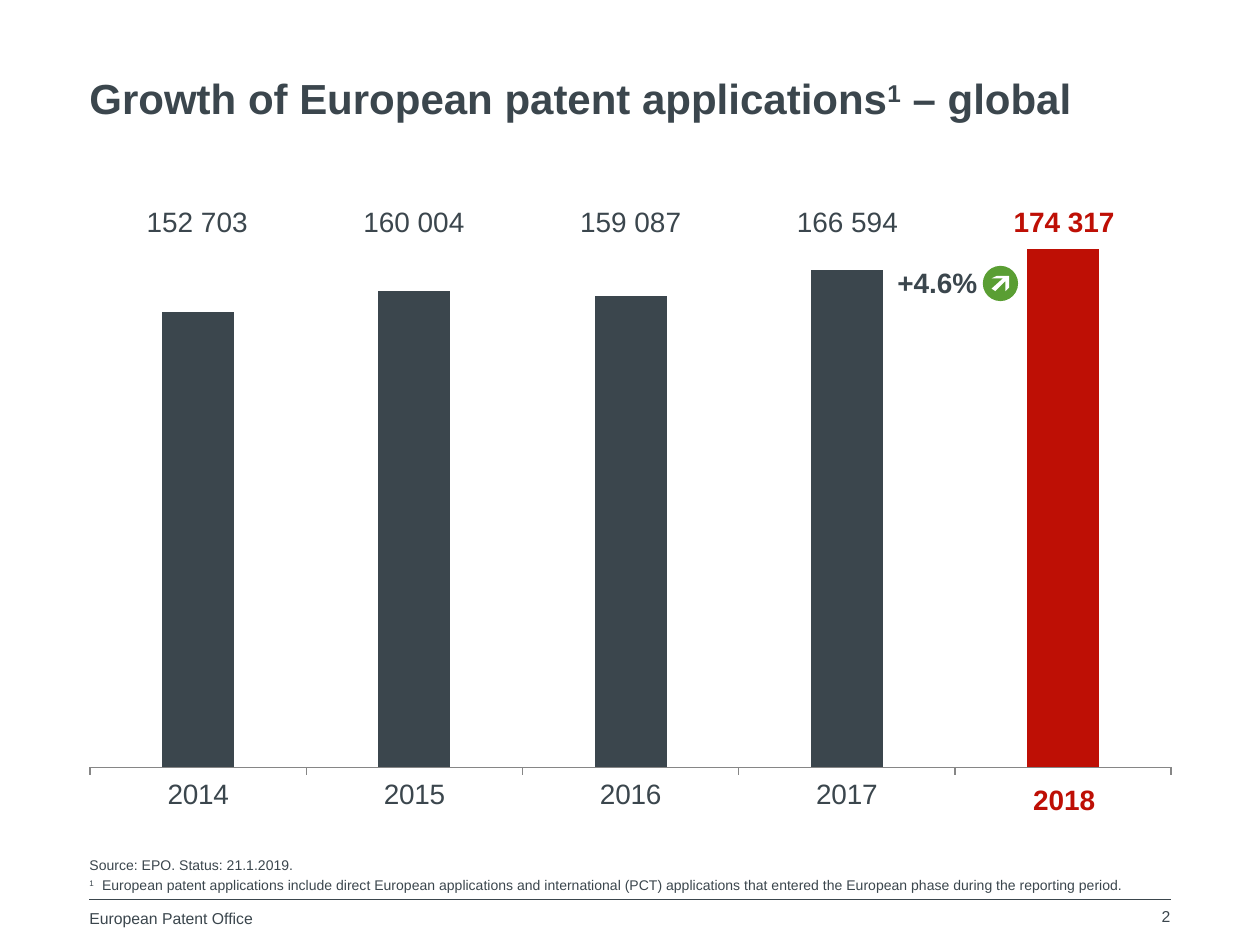
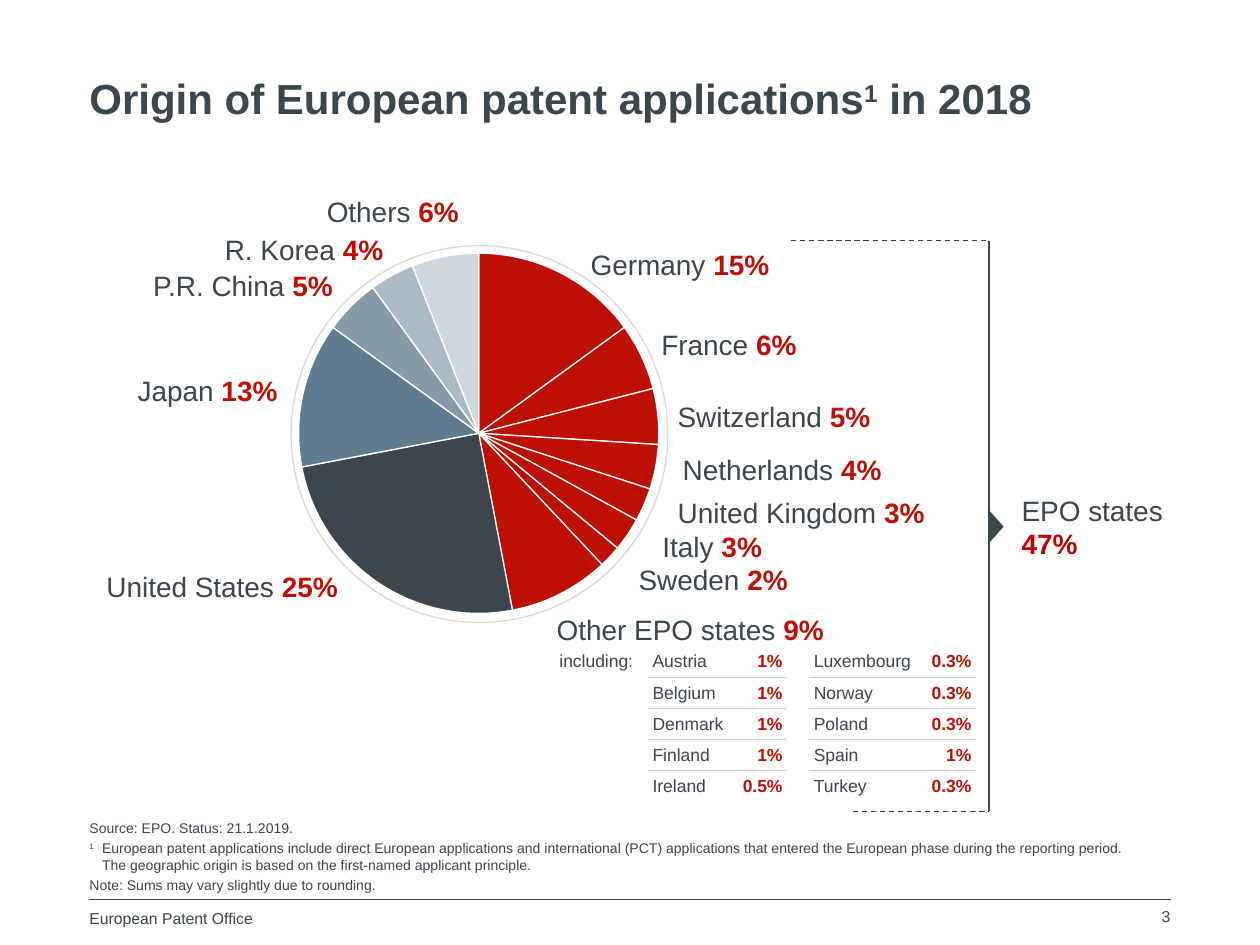
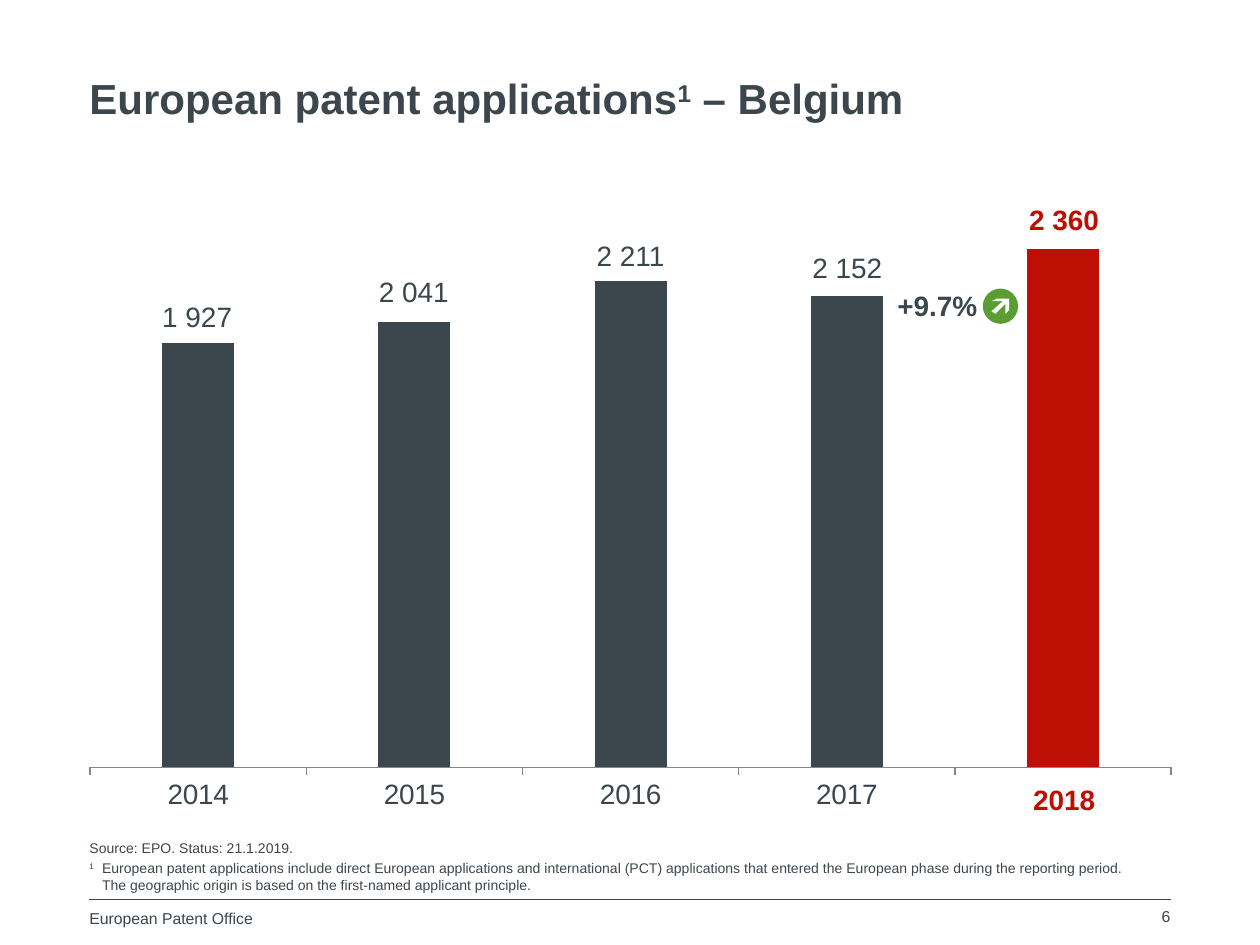
"""Build three slides on European patent applications: growth, origin and one country."""
from copy import deepcopy
from dataclasses import dataclass
from typing import NamedTuple

from lxml.etree import SubElement
from pptx import Presentation
from pptx.chart.chart import Chart
from pptx.chart.data import CategoryChartData
from pptx.dml.color import RGBColor
from pptx.enum.chart import XL_CHART_TYPE as ChartType, XL_TICK_MARK as TickMark
from pptx.enum.dml import MSO_LINE as Dash
from pptx.enum.shapes import MSO_CONNECTOR as ConnectorType, MSO_SHAPE as ShapeType
from pptx.enum.text import MSO_ANCHOR as Anchor, MSO_AUTO_SIZE as AutoSize, PP_ALIGN as Align
from pptx.oxml import parse_xml
from pptx.oxml.ns import nsdecls, qn
from pptx.slide import Slide
from pptx.table import _Cell as Cell
from pptx.text.text import TextFrame, _Paragraph as Paragraph
from pptx.util import Pt

PX = 9144
FONT = "Arial"
SLATE = RGBColor(0x3B, 0x46, 0x4D)
RED = RGBColor(0xBE, 0x0F, 0x05)
DEEP_RED = RGBColor(0xC0, 0x00, 0x00)
STEEL = RGBColor(0x5F, 0x7B, 0x8F)
MIST = RGBColor(0x85, 0x9B, 0xA9)
CLOUD = RGBColor(0xAC, 0xBA, 0xC4)
PALE = RGBColor(0xD1, 0xD8, 0xDD)
RING_GREY = RGBColor(0xD9, 0xD9, 0xD9)
RULE_GREY = RGBColor(0xCF, 0xCF, 0xCF)
AXIS_GREY = RGBColor(0x86, 0x86, 0x86)
GREEN = RGBColor(0x5A, 0x9E, 0x33)
WHITE = RGBColor(0xFF, 0xFF, 0xFF)
NO_STYLE = "{2D5ABB26-0587-4C30-8999-92F81FD0307C}"


class Box(NamedTuple):
    left: int
    top: int
    width: int
    height: int

    def emu(self) -> list[int]:
        return [length * PX for length in self]


@dataclass(frozen=True)
class Run:
    text: str
    size: int = 16
    color: RGBColor = SLATE
    bold: bool = False
    superscript: bool = False


@dataclass(frozen=True)
class Column:
    year: str
    share: int
    label: str
    label_top: int


@dataclass(frozen=True)
class Slice:
    origin: str
    percent: int
    color: RGBColor
    label: Box


@dataclass(frozen=True)
class ColumnSlide:
    number: int
    topic: str
    suffix: str
    columns: list[Column]
    growth: str
    growth_top: int
    footnote: list[str]
    source_top: int


MARGIN_LEFT, MARGIN_RIGHT = 71, 929
COLUMN_CHART = Box(71, 192, 859, 473)
COLUMN_PLOT = Box(71, 198, 859, 411)
PIE_CHART = Box(154, 187, 453, 313)
PIE_PLOT = Box(237, 201, 286, 286)
ARROW = [(11, 8), (7, 10), (16, 10), (7, 18), (10, 20), (18, 12), (18, 20), (21, 17), (21, 8)]

INCLUDED = ("European patent applications include direct European applications and international "
            "(PCT) applications that entered the European phase during the reporting period.")
PRINCIPLE = "The geographic origin is based on the first-named applicant principle."
ROUNDING = "Note: Sums may vary slightly due to rounding."

GLOBAL = ColumnSlide(
    2, "Growth of European patent applications", " – global",
    [Column("2014", 88, "152 703", 162), Column("2015", 92, "160 004", 162),
     Column("2016", 91, "159 087", 162), Column("2017", 96, "166 594", 162),
     Column("2018", 100, "174 317", 162)],
    "+4.6%", 211, [INCLUDED], 679)
BELGIUM = ColumnSlide(
    6, "European patent applications", " – Belgium",
    [Column("2014", 82, "1 927", 238), Column("2015", 86, "2 041", 218),
     Column("2016", 94, "2 211", 189), Column("2017", 91, "2 152", 199),
     Column("2018", 100, "2 360", 161)],
    "+9.7%", 229, [INCLUDED, PRINCIPLE], 666)
SLICES = [
    Slice("Germany", 15, RED, Box(459, 191, 164, 37)),
    Slice("France", 6, RED, Box(515, 255, 129, 37)),
    Slice("Switzerland", 5, RED, Box(528, 312, 175, 37)),
    Slice("Netherlands", 4, RED, Box(532, 354, 181, 37)),
    Slice("United Kingdom", 3, RED, Box(528, 388, 225, 37)),
    Slice("Italy", 3, RED, Box(516, 415, 100, 37)),
    Slice("Sweden", 2, RED, Box(497, 441, 140, 37)),
    Slice("Other EPO states", 9, RED, Box(432, 481, 235, 37)),
    Slice("United States", 25, SLATE, Box(72, 447, 206, 37)),
    Slice("Japan", 13, STEEL, Box(98, 291, 132, 37)),
    Slice("P.R. China", 5, MIST, Box(110, 208, 164, 37)),
    Slice("R. Korea", 4, CLOUD, Box(167, 179, 147, 37)),
    Slice("Others", 6, PALE, Box(248, 149, 126, 37)),
]
OTHER_STATES = [
    ("including:", "Austria", "1%", "", "Luxembourg", "0.3%"),
    ("", "Belgium", "1%", "", "Norway", "0.3%"),
    ("", "Denmark", "1%", "", "Poland", "0.3%"),
    ("", "Finland", "1%", "", "Spain", "1%"),
    ("", "Ireland", "0.5%", "", "Turkey", "0.3%"),
]
STATE_WIDTHS = [74, 68, 43, 17, 88, 45]
PERCENT_COLUMNS = {2, 5}
RULED_COLUMNS = {1, 2, 4, 5}


def add_runs(paragraph: Paragraph, runs: list[Run]) -> None:
    for item in runs:
        run = paragraph.add_run()
        run.text = item.text
        run.font.name = FONT
        run.font.size = Pt(item.size)
        run.font.bold = item.bold
        run.font.color.rgb = item.color
        if item.superscript:
            run._r.get_or_add_rPr().set("baseline", "30000")


def set_margins(target: TextFrame | Cell, margins: tuple[int, int, int, int]) -> None:
    (target.margin_left, target.margin_top,
     target.margin_right, target.margin_bottom) = [margin * PX for margin in margins]


def add_text(slide: Slide, box: Box, runs: list[Run], align: Align = Align.LEFT,
             anchor: Anchor = Anchor.TOP, margins: tuple[int, int, int, int] = (0, 0, 0, 0),
             wrap: bool = False) -> TextFrame:
    frame = slide.shapes.add_textbox(*box.emu()).text_frame
    frame.word_wrap = wrap
    frame.auto_size = AutoSize.NONE if wrap else AutoSize.SHAPE_TO_FIT_TEXT
    frame.vertical_anchor = anchor
    set_margins(frame, margins)
    frame.paragraphs[0].alignment = align
    add_runs(frame.paragraphs[0], runs)
    return frame


def add_line(slide: Slide, start: tuple[int, int], end: tuple[int, int],
             dashed: bool = False) -> None:
    points = [length * PX for length in (*start, *end)]
    connector = slide.shapes.add_connector(ConnectorType.STRAIGHT, *points)
    connector.line.color.rgb = SLATE
    connector.line.width = Pt(0.75)
    if dashed:
        connector.line.dash_style = Dash.DASH
    SubElement(connector._element.spPr, qn("a:effectLst"))


def add_filled_shape(slide: Slide, kind: ShapeType, box: Box, color: RGBColor,
                     rotation: int = 0) -> None:
    shape = slide.shapes.add_shape(kind, *box.emu())
    shape.shadow.inherit = False
    shape.fill.solid()
    shape.fill.fore_color.rgb = color
    shape.line.fill.background()
    shape.rotation = rotation


def add_source(slide: Slide, top: int, footnote: list[str], closing: str = "") -> None:
    frame = add_text(slide, Box(MARGIN_LEFT, top, 858, 709 - top),
                     [Run("Source: EPO. Status: 21.1.2019.", 8)],
                     anchor=Anchor.BOTTOM, wrap=True)
    paragraph = frame.add_paragraph()
    properties = paragraph._p.get_or_add_pPr()
    properties.set("marL", str(10 * PX))
    properties.set("indent", str(-10 * PX))
    add_runs(paragraph, [Run("1\t", 8, superscript=True), Run(footnote[0], 8)])
    for line in footnote[1:]:
        run_properties = deepcopy(paragraph.runs[-1]._r.rPr)
        paragraph.add_line_break()
        paragraph._p[-1].append(run_properties)
        add_runs(paragraph, [Run(line, 8)])
    if closing:
        add_runs(frame.add_paragraph(), [Run(closing, 8)])
    for paragraph in frame.paragraphs:
        paragraph.space_before = Pt(2)


def add_base_slide(presentation: Presentation, number: int, topic: str, suffix: str) -> Slide:
    slide = presentation.slides.add_slide(presentation.slide_layouts[5])
    title = slide.shapes.title
    title.left, title.top, title.width, title.height = Box(MARGIN_LEFT, 59, 858, 59).emu()
    frame = title.text_frame
    frame.auto_size = AutoSize.NONE
    frame.vertical_anchor = Anchor.TOP
    set_margins(frame, (0, 0, 0, 0))
    paragraph = frame.paragraphs[0]
    paragraph.alignment = Align.LEFT
    paragraph.line_spacing = Pt(28)
    add_runs(paragraph, [Run(topic, 24, bold=True), Run("1", 24, bold=True, superscript=True),
                         Run(suffix, 24, bold=True)])
    add_line(slide, (MARGIN_LEFT, 714), (MARGIN_RIGHT, 714))
    add_text(slide, Box(MARGIN_LEFT, 721, 170, 25), [Run("European Patent Office", 9)], wrap=True)
    add_text(slide, Box(732, 720, 197, 24), [Run(str(number), 9)], Align.RIGHT, wrap=True)
    return slide


def add_plain_chart(slide: Slide, kind: ChartType, box: Box, plot: Box,
                    data: CategoryChartData) -> Chart:
    chart = slide.shapes.add_chart(kind, *box.emu(), data).chart
    chart.has_legend = False
    chart.has_title = False
    chart.font.name = FONT
    chart.font.size = Pt(18)
    chart.font.color.rgb = SLATE
    chart.plots[0].vary_by_categories = False
    fractions = {
        "x": (plot.left - box.left) / box.width, "y": (plot.top - box.top) / box.height,
        "w": plot.width / box.width, "h": plot.height / box.height,
    }
    sizes = "".join(f'<c:{name} val="{value:.4f}"/>' for name, value in fractions.items())
    area = chart._chartSpace.xpath("c:chart/c:plotArea")[0]
    for layout in area.findall(qn("c:layout")):
        area.remove(layout)
    area.insert(0, parse_xml(
        f'<c:layout {nsdecls("c")}><c:manualLayout><c:layoutTarget val="inner"/>'
        f'<c:xMode val="edge"/><c:yMode val="edge"/>{sizes}</c:manualLayout></c:layout>'))
    return chart


def add_growth(slide: Slide, top: int, growth: str) -> None:
    add_text(slide, Box(712, top, 64, 27), [Run(growth, bold=True)], Align.CENTER)
    badge = Box(780, top, 28, 28)
    add_filled_shape(slide, ShapeType.OVAL, badge, GREEN)
    points = [(badge.left + x, badge.top + y) for x, y in ARROW]
    builder = slide.shapes.build_freeform(*points[0], scale=PX)
    builder.add_line_segments(points[1:], close=True)
    arrow = builder.convert_to_shape()
    arrow.shadow.inherit = False
    arrow.fill.solid()
    arrow.fill.fore_color.rgb = WHITE
    arrow.line.fill.background()


def add_column_slide(presentation: Presentation, content: ColumnSlide) -> None:
    slide = add_base_slide(presentation, content.number, content.topic, content.suffix)
    *earlier, latest = content.columns
    data = CategoryChartData()
    data.categories = [column.year for column in earlier] + [""]
    data.add_series("Series 1", [column.share for column in earlier] + [None])
    data.add_series("Series 2", [None] * len(earlier) + [latest.share])
    chart = add_plain_chart(slide, ChartType.COLUMN_STACKED, COLUMN_CHART, COLUMN_PLOT, data)
    plot = chart.plots[0]
    plot.gap_width = 200
    plot.overlap = 100
    for series, color in zip(plot.series, (SLATE, RED)):
        series.format.fill.solid()
        series.format.fill.fore_color.rgb = color
    chart.value_axis.visible = False
    chart.value_axis.has_major_gridlines = False
    chart.value_axis.minimum_scale = 0
    chart.value_axis.maximum_scale = 100
    chart.category_axis.major_tick_mark = TickMark.OUTSIDE
    chart.category_axis.tick_labels.font.size = Pt(16)
    chart.category_axis.format.line.color.rgb = AXIS_GREY
    chart.category_axis.format.line.width = Pt(0.75)

    pitch = COLUMN_PLOT.width / len(content.columns)
    for index, column in enumerate(content.columns):
        left = round(COLUMN_PLOT.left + pitch * (index + 0.5) - 40.5)
        is_latest = column is latest
        color = RED if is_latest else SLATE
        labels = [(column.label, column.label_top)]
        if is_latest:
            labels.append((column.year, 621))
        for text, top in labels:
            add_text(slide, Box(left, top, 81, 27), [Run(text, color=color, bold=is_latest)],
                     Align.CENTER)
    add_growth(slide, content.growth_top, content.growth)
    add_source(slide, content.source_top, content.footnote)


def add_cell_rule(cell: Cell, tag: str) -> None:
    cell._tc.get_or_add_tcPr().insert(0, parse_xml(
        f'<a:{tag} {nsdecls("a")} w="{Pt(0.75)}"><a:solidFill>'
        f'<a:srgbClr val="{RULE_GREY}"/></a:solidFill></a:{tag}>'))


def add_state_table(slide: Slide) -> None:
    box = Box(440, 513, sum(STATE_WIDTHS), 123)
    table = slide.shapes.add_table(len(OTHER_STATES), len(STATE_WIDTHS), *box.emu()).table
    table.first_row = False
    table.horz_banding = False
    table._tbl.tblPr.find(qn("a:tableStyleId")).text = NO_STYLE
    for column, width in zip(table.columns, STATE_WIDTHS):
        column.width = width * PX
    for row, texts in enumerate(OTHER_STATES):
        for column, text in enumerate(texts):
            cell = table.cell(row, column)
            cell.fill.background()
            cell.vertical_anchor = Anchor.MIDDLE
            set_margins(cell, (4, 4, 4, 4))
            paragraph = cell.text_frame.paragraphs[0]
            is_percent = column in PERCENT_COLUMNS
            paragraph.alignment = Align.RIGHT if is_percent else Align.LEFT
            if text:
                add_runs(paragraph, [Run(text, 10, RED if is_percent else SLATE, is_percent)])
            else:
                paragraph._p.get_or_add_endParaRPr().set("sz", "1000")
            if column in RULED_COLUMNS:
                if row < len(OTHER_STATES) - 1:
                    add_cell_rule(cell, "lnB")
                if row > 0:
                    add_cell_rule(cell, "lnT")


def add_origin_slide(presentation: Presentation) -> None:
    slide = add_base_slide(presentation, 3, "Origin of European patent applications", " in 2018")
    data = CategoryChartData()
    data.categories = [str(index + 1) for index in range(len(SLICES))]
    data.add_series("Series 1", [part.percent for part in SLICES])
    chart = add_plain_chart(slide, ChartType.PIE, PIE_CHART, PIE_PLOT, data)
    series = chart.plots[0].series[0]
    for index, part in enumerate(SLICES):
        point_format = series.points[index].format
        point_format.fill.solid()
        point_format.fill.fore_color.rgb = part.color
        point_format.line.color.rgb = WHITE
        point_format.line.width = Pt(0.75)
        add_text(slide, part.label,
                 [Run(f"{part.origin} "), Run(f"{part.percent}%", color=RED, bold=True)],
                 Align.LEFT if part.color == RED else Align.RIGHT, Anchor.MIDDLE, (10, 5, 10, 5))

    ring = slide.shapes.add_shape(ShapeType.OVAL, *Box(231, 195, 299, 299).emu())
    ring.shadow.inherit = False
    ring.fill.background()
    ring.line.color.rgb = RING_GREY
    ring.line.width = Pt(0.75)

    bracket_x, bracket_top, bracket_bottom = 785, 191, 644
    add_line(slide, (628, bracket_top), (bracket_x, bracket_top), dashed=True)
    add_line(slide, (677, bracket_bottom), (bracket_x, bracket_bottom), dashed=True)
    add_line(slide, (bracket_x, bracket_top), (bracket_x, bracket_bottom))
    add_filled_shape(slide, ShapeType.ISOSCELES_TRIANGLE, Box(777, 412, 27, 12), SLATE, 90)
    add_text(slide, Box(801, 386, 128, 64),
             [Run("EPO states "), Run("47%", color=DEEP_RED, bold=True)],
             anchor=Anchor.MIDDLE, margins=(10, 5, 0, 5), wrap=True)
    add_state_table(slide)
    add_source(slide, 650, [INCLUDED, PRINCIPLE], ROUNDING)


def main() -> None:
    presentation = Presentation()
    presentation.slide_width = 1000 * PX
    presentation.slide_height = 750 * PX
    add_column_slide(presentation, GLOBAL)
    add_origin_slide(presentation)
    add_column_slide(presentation, BELGIUM)
    presentation.save("out.pptx")


if __name__ == "__main__":
    main()
